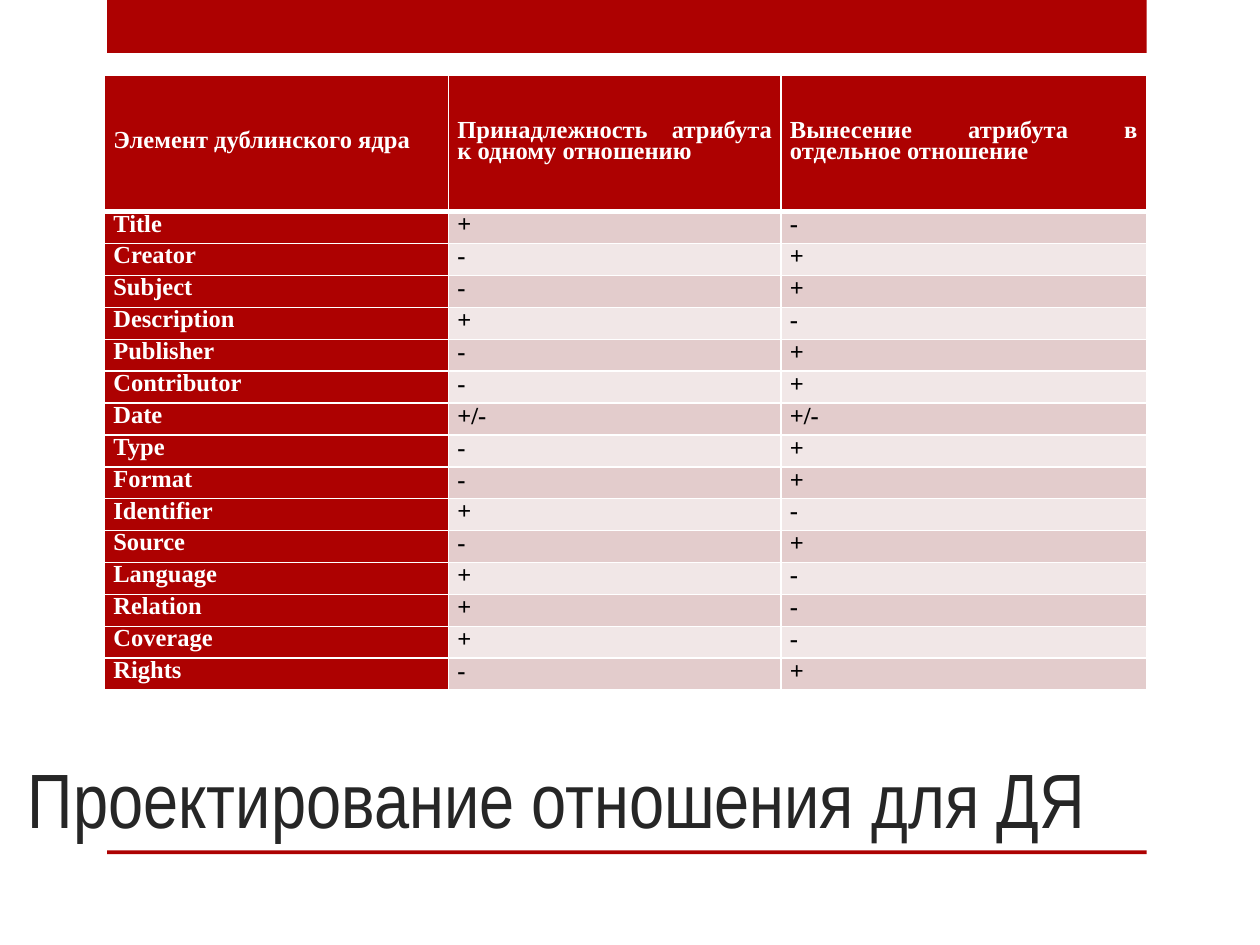
from dataclasses import dataclass

from lxml import etree
from pptx import Presentation
from pptx.dml.color import RGBColor
from pptx.enum.shapes import MSO_SHAPE
from pptx.enum.text import MSO_ANCHOR, MSO_AUTO_SIZE, PP_ALIGN
from pptx.oxml.ns import qn
from pptx.util import Inches, Pt

RECT = MSO_SHAPE.RECTANGLE
MIDDLE, BOTTOM = MSO_ANCHOR.MIDDLE, MSO_ANCHOR.BOTTOM
LEFT, JUSTIFY = PP_ALIGN.LEFT, PP_ALIGN.JUSTIFY
TITLE_ONLY = 5


@dataclass(frozen=True)
class Theme:
    red: str = "AD0101"
    white: str = "FFFFFF"
    black: str = "000000"
    title: str = "262626"
    bands: tuple = ("E3CCCC", "F1E7E7")
    title_font: str = "Arial Narrow"
    table_font: str = "Times New Roman"
    title_size: int = 44
    table_size: int = 14
    grid: int = 1
    header_rule: int = 3


THEME = Theme()

COLUMN_WIDTHS = (2.73, 2.64, 2.9)
HEADER_HEIGHT = 1.08
HEADERS = (
    "Элемент дублинского ядра",
    "Принадлежность атрибута к одному отношению",
    "Вынесение атрибута в отдельное отношение",
)
ELEMENTS = (
    ("Title", "+", "-"),
    ("Creator", "-", "+"),
    ("Subject", "-", "+"),
    ("Description", "+", "-"),
    ("Publisher", "-", "+"),
    ("Contributor", "-", "+"),
    ("Date", "+/-", "+/-"),
    ("Type", "-", "+"),
    ("Format", "-", "+"),
    ("Identifier", "+", "-"),
    ("Source", "-", "+"),
    ("Language", "+", "-"),
    ("Relation", "+", "-"),
    ("Coverage", "+", "-"),
    ("Rights", "-", "+"),
)


def rgb(color):
    return RGBColor.from_string(color)


def write(tf, text, *, font, size, color, bold=False, align=LEFT, spacing=None):
    p = tf.paragraphs[0]
    p.alignment = align
    if spacing is not None:
        p.line_spacing = spacing
    r = p.add_run()
    r.text = text
    r.font.name = font
    r.font.size = Pt(size)
    r.font.bold = bold
    r.font.color.rgb = rgb(color)


def add_bar(s, left, top, width, height):
    sp = s.shapes.add_shape(RECT, *map(Inches, (left, top, width, height)))
    sp.shadow.inherit = False
    sp.fill.solid()
    sp.fill.fore_color.rgb = rgb(THEME.red)
    sp.line.fill.background()


def add_title(s, text, left, top, width, height):
    sp = s.shapes.title
    sp.left, sp.top, sp.width, sp.height = map(Inches, (left, top, width, height))
    tf = sp.text_frame
    tf.word_wrap = True
    tf.auto_size = MSO_AUTO_SIZE.NONE
    tf.vertical_anchor = BOTTOM
    write(tf, text, font=THEME.title_font, size=THEME.title_size, color=THEME.title)


def set_borders(cell, top, bottom):
    """Draw white cell borders; top and bottom are widths in points."""
    tc_pr = cell._tc.get_or_add_tcPr()
    widths = {"L": THEME.grid, "R": THEME.grid, "T": top, "B": bottom}
    for side, width in widths.items():
        ln = etree.SubElement(tc_pr, qn(f"a:ln{side}"), w=str(Pt(width)))
        fill = etree.SubElement(ln, qn("a:solidFill"))
        etree.SubElement(fill, qn("a:srgbClr"), val=THEME.white)


def fill_cell(cell, text, row, col):
    header = row == 0
    on_red = header or col == 0
    set_borders(
        cell,
        top=THEME.header_rule if row == 1 else THEME.grid,
        bottom=THEME.header_rule if header else THEME.grid,
    )
    cell.fill.solid()
    cell.fill.fore_color.rgb = rgb(THEME.red if on_red else THEME.bands[(row - 1) % 2])
    cell.vertical_anchor = MIDDLE
    cell.margin_left = cell.margin_right = Inches(0.07)
    cell.margin_top = cell.margin_bottom = 0
    write(
        cell.text_frame, text,
        font=THEME.table_font, size=THEME.table_size, bold=True,
        color=THEME.white if on_red else THEME.black,
        align=JUSTIFY, spacing=Pt(11 if col == 0 and not header else 12),
    )


def add_element_table(s, left, top, width, height):
    rows = (HEADERS, *ELEMENTS)
    box = map(Inches, (left, top, width, height))
    table = s.shapes.add_table(len(rows), len(HEADERS), *box).table
    for column, column_width in zip(table.columns, COLUMN_WIDTHS):
        column.width = Inches(column_width)
    row_height = (height - HEADER_HEIGHT) / len(ELEMENTS)
    for i, texts in enumerate(rows):
        table.rows[i].height = Inches(row_height if i else HEADER_HEIGHT)
        for j, text in enumerate(texts):
            fill_cell(table.cell(i, j), text, i, j)


def main():
    prs = Presentation()
    prs.slide_width, prs.slide_height = Inches(10), Inches(7.5)
    s = prs.slides.add_slide(prs.slide_layouts[TITLE_ONLY])
    add_bar(s, 0.85, 0, 8.25, 0.42)
    add_bar(s, 0.85, 6.75, 8.25, 0.03)
    add_title(s, "Проектирование отношения для ДЯ", 0.12, 5, 9.84, 1.75)
    add_element_table(s, 0.83, 0.6, sum(COLUMN_WIDTHS), 4.88)
    prs.save("out.pptx")


if __name__ == "__main__":
    main()
